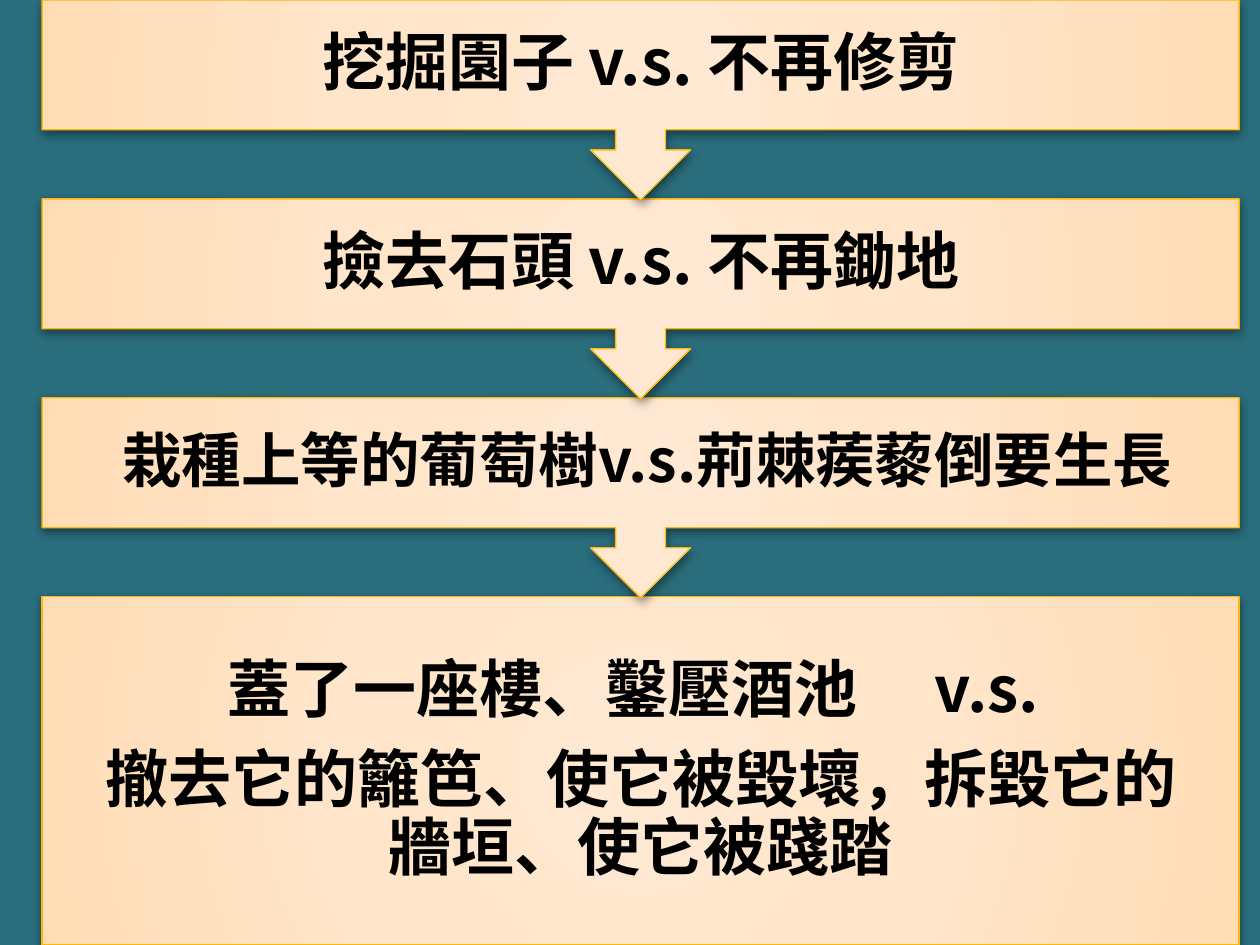
from lxml import etree
from pptx import Presentation
from pptx.dml.color import RGBColor
from pptx.enum.shapes import MSO_SHAPE as SHAPE
from pptx.enum.text import MSO_ANCHOR as ANCHOR, PP_ALIGN as ALIGN
from pptx.oxml import parse_xml
from pptx.oxml.ns import nsdecls, qn
from pptx.util import Cm, Pt

TEAL = RGBColor(0x2A, 0x6D, 0x7D)
GOLD = RGBColor(0xFE, 0xB8, 0x0A)
BLACK = RGBColor(0x00, 0x00, 0x00)
PEACH_STOPS = [
    (0, RGBColor(0xFF, 0xE9, 0xD3)),
    (50, RGBColor(0xFF, 0xE5, 0xC9)),
    (97, RGBColor(0xFF, 0xDD, 0xB7)),
    (100, RGBColor(0xFF, 0xDB, 0xB2)),
]
FONT = "Noto Sans CJK SC"
STEPS = [
    (["挖掘園子 v.s. 不再修剪"], 36),
    (["撿去石頭 v.s. 不再鋤地"], 36),
    ([" 栽種上等的葡萄樹v.s.荊棘蒺藜倒要生長"], 34),
    (["蓋了一座樓、鑿壓酒池\t v.s. ", "撤去它的籬笆、使它被毀壞，拆毀它的牆垣、使它被踐踏"], 36),
]


def style_panel(s):
    """Give a panel its radial peach fill, gold outline and soft shadow."""
    s.fill.gradient()
    grad = s._element.spPr.find(qn("a:gradFill"))
    stops = "".join(
        f'<a:gs pos="{pos * 1000}"><a:srgbClr val="{color}"/></a:gs>'
        for pos, color in PEACH_STOPS
    )
    grad.getparent().replace(grad, parse_xml(
        f'<a:gradFill {nsdecls("a")} rotWithShape="1"><a:gsLst>{stops}</a:gsLst>'
        '<a:path path="circle"><a:fillToRect l="50000" t="50000" r="50000" b="50000"/>'
        '</a:path></a:gradFill>'
    ))
    s.line.color.rgb = GOLD
    s.line.width = Pt(0.75)
    s.shadow.inherit = False
    s._element.spPr.find(qn("a:effectLst")).append(parse_xml(
        f'<a:outerShdw {nsdecls("a")} blurRad="{Pt(5)}" dist="{Pt(2)}" dir="5400000" '
        'rotWithShape="0"><a:srgbClr val="000000"><a:alpha val="43000"/></a:srgbClr>'
        '</a:outerShdw>'
    ))


def write_text(tf, lines, size):
    """Write centred bold paragraphs into a panel."""
    tf.word_wrap = True
    tf.vertical_anchor = ANCHOR.MIDDLE
    tf.margin_left = tf.margin_right = tf.margin_top = tf.margin_bottom = Cm(0.71)
    for i, line in enumerate(lines):
        p = tf.add_paragraph() if i else tf.paragraphs[0]
        p.alignment = ALIGN.CENTER
        p.line_spacing = 0.9
        p.space_after = Pt(size * 0.35)
        p.font.name = FONT
        p.font.size = Pt(size)
        p.font.bold = True
        p.font.color.rgb = BLACK
        ea = etree.SubElement(p.font._element, qn("a:ea"))
        ea.set("typeface", FONT)
        p.add_run().text = line


def add_panel(slide, shape, box, lines, size):
    """Place one text panel in the given box."""
    s = slide.shapes.add_shape(shape, *box)
    style_panel(s)
    write_text(s.text_frame, lines, size)


def add_process(slide, left, top, width, height):
    """Stack the steps from the last to the first, each pointing to the next."""
    pitch, callout_height = Cm(4.01), Cm(4.03)
    last = len(STEPS) - 1
    for i in range(last, -1, -1):
        offset = i * pitch
        shape = SHAPE.RECTANGLE if i == last else SHAPE.DOWN_ARROW_CALLOUT
        panel_height = height - offset if i == last else callout_height
        add_panel(slide, shape, (left, top + offset, width, panel_height), *STEPS[i])


def main():
    """Build and save the slide."""
    prs = Presentation()
    prs.slide_width, prs.slide_height = Cm(25.4), Cm(19.05)
    slide = prs.slides.add_slide(prs.slide_layouts[6])
    slide.background.fill.solid()
    slide.background.fill.fore_color.rgb = TEAL
    add_process(slide, Cm(0.85), Cm(0), Cm(24.13), prs.slide_height)
    prs.save("out.pptx")


if __name__ == "__main__":
    main()
